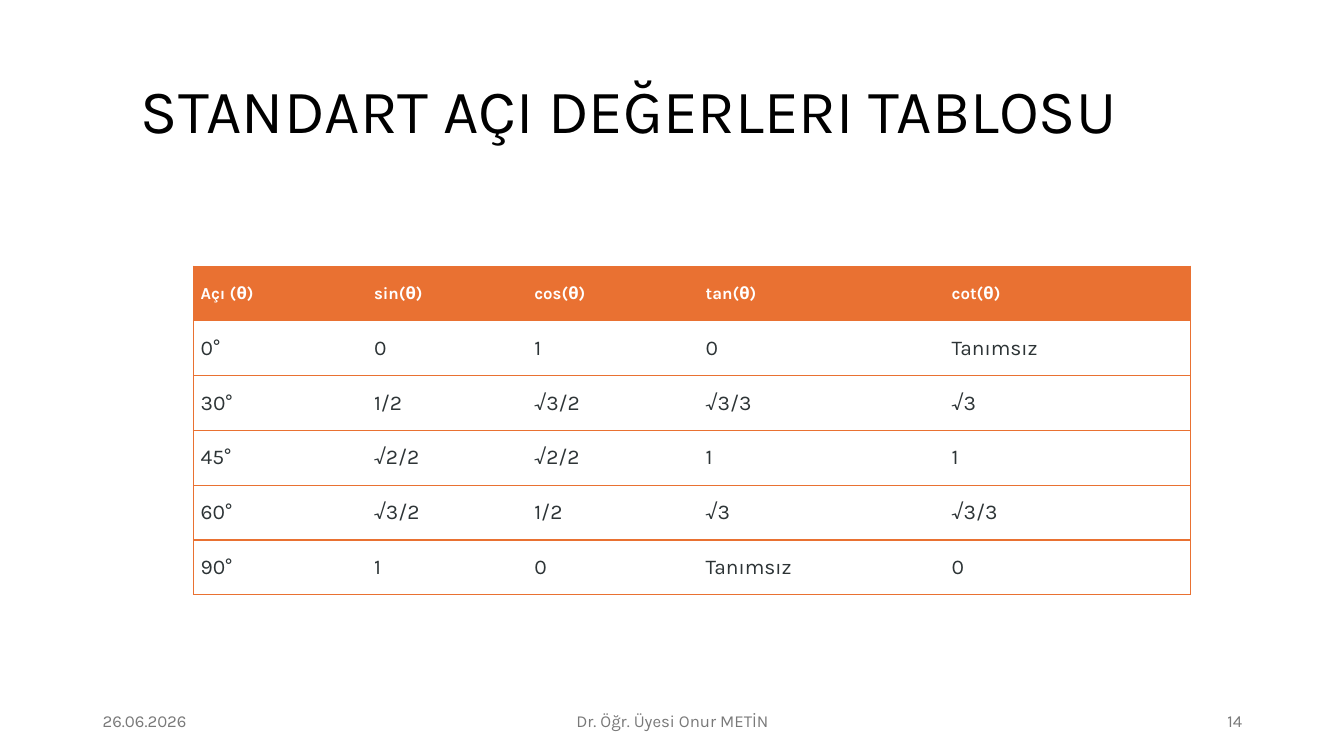
from lxml import etree
from pptx import Presentation
from pptx.dml.color import RGBColor
from pptx.enum.text import MSO_ANCHOR, PP_ALIGN
from pptx.oxml.ns import qn
from pptx.util import Inches, Pt

FONT = "Karla"
ORANGE, BLACK, WHITE, INK, GREY = "E97132", "000000", "FFFFFF", "2D3436", "797979"

# text, (left, top, width, height), size, colour, alignment, line spacing
TEXTS = [
    ("STANDART AÇI DEĞERLERI TABLOSU", (1.3, 0.4, 11.12, 1.45), 44, BLACK, PP_ALIGN.LEFT, 0.9),
    ("26.06.2026", (0.92, 6.95, 3, 0.4), 12, GREY, PP_ALIGN.LEFT, 1.0),
    ("Dr. Öğr. Üyesi Onur METİN", (4.42, 6.95, 4.5, 0.4), 12, GREY, PP_ALIGN.CENTER, 1.0),
    ("14", (9.42, 6.95, 3, 0.4), 12, GREY, PP_ALIGN.RIGHT, 1.0),
]
ANGLES = [
    ("Açı (θ)", "sin(θ)", "cos(θ)", "tan(θ)", "cot(θ)"),
    ("0°", "0", "1", "0", "Tanımsız"),
    ("30°", "1/2", "√3/2", "√3/3", "√3"),
    ("45°", "√2/2", "√2/2", "1", "1"),
    ("60°", "√3/2", "1/2", "√3", "√3/3"),
    ("90°", "1", "0", "Tanımsız", "0"),
]
TABLE_LEFT, TABLE_TOP, TABLE_HEIGHT = 1.92, 2.64, 3.26
COLUMN_WIDTHS = [1.72, 1.59, 1.7, 2.44, 2.44]


def rgb(value):
    return RGBColor.from_string(value)


def add_run(p, text, size, color, bold=False):
    r = p.add_run()
    r.text = text
    r.font.name = FONT
    r.font.size = Pt(size)
    r.font.bold = bold
    r.font.color.rgb = rgb(color)


def add_text(s, text, box, size, color, align, spacing):
    tf = s.shapes.add_textbox(*map(Inches, box)).text_frame
    tf.word_wrap = True
    tf.vertical_anchor = MSO_ANCHOR.MIDDLE
    p = tf.paragraphs[0]
    p.alignment = align
    p.line_spacing = spacing
    add_run(p, text, size, color)


def set_borders(cell, shown):
    """Draw the sides named in shown (of L, R, T, B) and clear the others."""
    tc_pr = cell._tc.get_or_add_tcPr()
    for i, side in enumerate("LRTB"):
        ln = etree.Element(qn(f"a:ln{side}"), w=str(Pt(1)))
        if side in shown:
            fill = etree.SubElement(ln, qn("a:solidFill"))
            etree.SubElement(fill, qn("a:srgbClr"), val=ORANGE)
        else:
            etree.SubElement(ln, qn("a:noFill"))
        tc_pr.insert(i, ln)


def add_angle_table(s):
    last = len(COLUMN_WIDTHS) - 1
    table = s.shapes.add_table(
        len(ANGLES), len(COLUMN_WIDTHS), Inches(TABLE_LEFT), Inches(TABLE_TOP),
        Inches(sum(COLUMN_WIDTHS)), Inches(TABLE_HEIGHT)).table
    table.first_row = table.horz_banding = False
    for column, width in zip(table.columns, COLUMN_WIDTHS):
        column.width = Inches(width)
    for i, row in enumerate(ANGLES):
        header = i == 0
        for j, text in enumerate(row):
            cell = table.cell(i, j)
            cell.vertical_anchor = MSO_ANCHOR.MIDDLE
            cell.margin_left = cell.margin_right = Inches(0.07)
            cell.margin_top = cell.margin_bottom = Inches(0.03)
            if header:
                cell.fill.solid()
                cell.fill.fore_color.rgb = rgb(ORANGE)
            else:
                cell.fill.background()
            set_borders(cell, "TB" + "L" * (j == 0) + "R" * (j == last))
            add_run(cell.text_frame.paragraphs[0], text,
                    12 if header else 15, WHITE if header else INK, header)


def main():
    prs = Presentation()
    prs.slide_width, prs.slide_height = Inches(13.33), Inches(7.5)
    s = prs.slides.add_slide(prs.slide_layouts[6])
    for item in TEXTS:
        add_text(s, *item)
    add_angle_table(s)
    prs.save("out.pptx")


if __name__ == "__main__":
    main()
